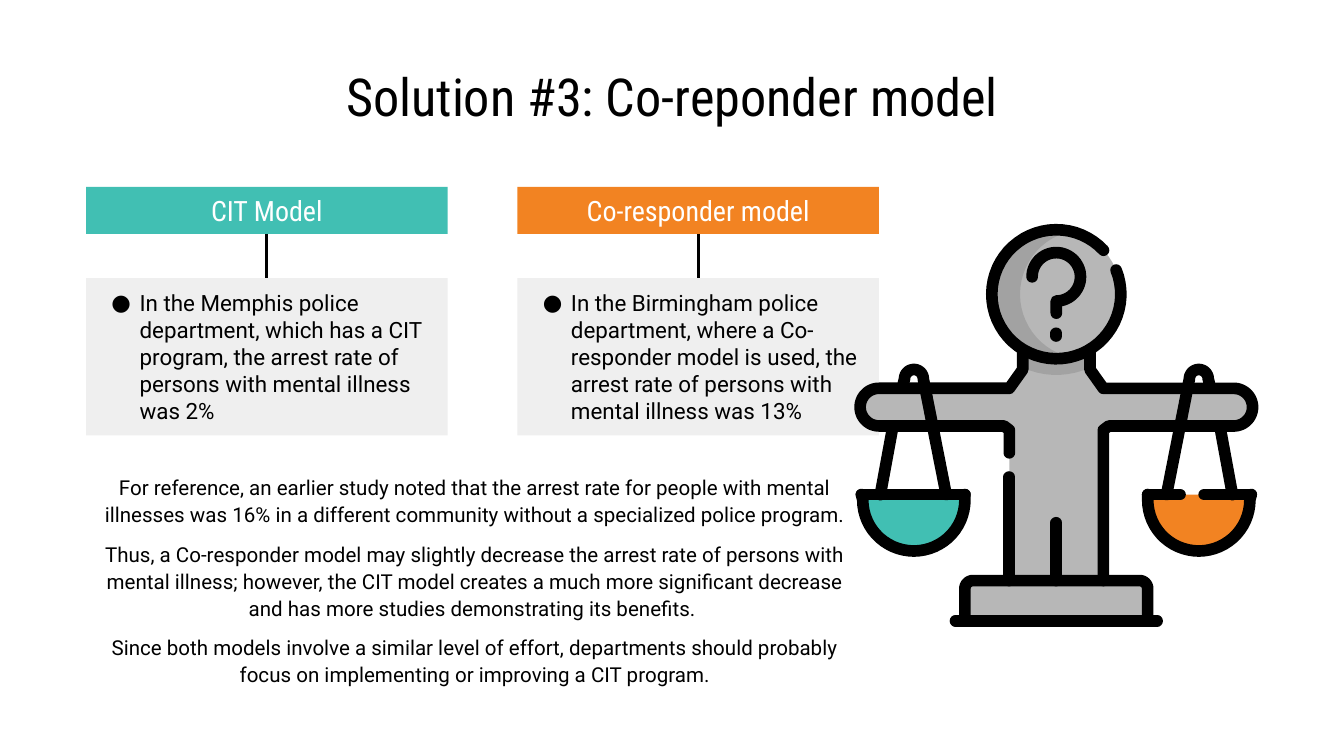
import math

from lxml import etree
from pptx import Presentation
from pptx.dml.color import RGBColor
from pptx.enum import shapes, text
from pptx.oxml.ns import qn
from pptx.util import Inches, Pt

BLACK = RGBColor(0x00, 0x00, 0x00)
WHITE = RGBColor(0xFF, 0xFF, 0xFF)
TEAL = RGBColor(0x41, 0xBF, 0xB3)
ORANGE = RGBColor(0xF2, 0x83, 0x22)
PALE = RGBColor(0xEF, 0xEF, 0xEF)
GREY = RGBColor(0xB7, 0xB7, 0xB7)
HEADING, BODY = "Roboto Condensed", "Roboto"
STROKE = 6.25


def add_run(p, words, size, font, color=BLACK):
    r = p.add_run()
    r.text = words
    r.font.size, r.font.name = Pt(size), font
    r.font.color.rgb = color


def set_frame(tf, inset=0.1):
    tf.word_wrap = True
    tf.vertical_anchor = text.MSO_ANCHOR.MIDDLE
    tf.margin_left = tf.margin_right = Inches(0.1)
    tf.margin_top = tf.margin_bottom = Inches(inset)


def add_bullet(p, size):
    pPr = p._p.get_or_add_pPr()
    pPr.set("marL", str(Inches(0.3)))
    pPr.set("indent", str(-Inches(0.21)))
    clr = etree.SubElement(pPr, qn("a:buClr"))
    etree.SubElement(clr, qn("a:srgbClr"), val=str(BLACK))
    etree.SubElement(pPr, qn("a:buSzPts"), val=str(size * 100))
    etree.SubElement(pPr, qn("a:buFont"), typeface=BODY)
    etree.SubElement(pPr, qn("a:buChar"), char="●")
    etree.SubElement(p._p, qn("a:endParaRPr"), sz=str(size * 100))


def add_title(s, box, words):
    tf = s.shapes.add_textbox(*map(Inches, box)).text_frame
    set_frame(tf)
    p = tf.paragraphs[0]
    p.alignment = text.PP_ALIGN.CENTER
    add_run(p, words, 28, HEADING)


def add_panel(shape_list, box, fill):
    sp = shape_list.add_shape(shapes.MSO_SHAPE.RECTANGLE, *map(Inches, box))
    sp.shadow.inherit = False
    sp.fill.solid()
    sp.fill.fore_color.rgb = fill
    sp.line.fill.background()
    set_frame(sp.text_frame)
    return sp


def add_model(s, box, name, finding, color):
    x, y, w, h = box
    grp = s.shapes.add_group_shape()
    # Header bar
    header = add_panel(grp.shapes, (x, y, w, 0.35), color)
    p = header.text_frame.paragraphs[0]
    p.alignment = text.PP_ALIGN.CENTER
    add_run(p, name, 15, HEADING, WHITE)
    # Finding
    card = add_panel(grp.shapes, (x, y + 0.68, w, h - 0.68), PALE)
    p = card.text_frame.paragraphs[0]
    p.alignment = text.PP_ALIGN.LEFT
    add_run(p, finding, 12, BODY)
    add_bullet(p, 12)
    # Link
    link = s.shapes.add_connector(shapes.MSO_CONNECTOR.STRAIGHT, 0, 0, 0, 0)
    link.begin_connect(header, 2)
    link.end_connect(card, 0)
    link.line.color.rgb = BLACK
    link.line.width = Pt(1.5)
    etree.SubElement(link._element.spPr, qn("a:effectLst"))


def add_conclusion(s, box, paragraphs):
    tf = s.shapes.add_textbox(*map(Inches, box)).text_frame
    set_frame(tf, 0.05)
    tf.vertical_anchor = text.MSO_ANCHOR.TOP
    for i, words in enumerate(paragraphs):
        p = tf.add_paragraph() if i else tf.paragraphs[0]
        p.alignment = text.PP_ALIGN.CENTER
        p.line_spacing = 1.1
        p.space_before = Pt(6.5 if i else 0)
        add_run(p, words, 11, BODY)


def arc(cx, cy, radius, start, end):
    """Points along an arc; degrees run clockwise from the right."""
    n = max(2, math.ceil(abs(end - start) / 6))
    angles = [math.radians(start + (end - start) * i / n) for i in range(n + 1)]
    return [(cx + radius * math.cos(a), cy + radius * math.sin(a)) for a in angles]


def mirror(points, width=3):
    return [(width - x, y) for x, y in points]


def add_scales_figure(s, box):
    left, top, w, _ = box
    k = w / 3
    grp = s.shapes.add_group_shape()

    def outline(points, closed):
        pts = [(Inches(left + x * k), Inches(top + y * k)) for x, y in points]
        fb = grp.shapes.build_freeform(*pts[0], scale=1.0)
        fb.add_line_segments(pts[1:], close=closed)
        sp = fb.convert_to_shape()
        sp.shadow.inherit = False
        return sp

    def area(points, color, alpha=None):
        sp = outline(points, True)
        sp.fill.solid()
        sp.fill.fore_color.rgb = color
        sp.line.fill.background()
        if alpha:
            clr = sp._element.spPr.find(qn("a:solidFill"))[0]
            etree.SubElement(clr, qn("a:alpha"), val=str(alpha * 1000))

    def stroke(points):
        sp = outline(points, False)
        sp.fill.background()
        sp.line.color.rgb = BLACK
        sp.line.width = Pt(STROKE * k)
        ln = sp.line._get_or_add_ln()
        ln.set("cap", "rnd")
        etree.SubElement(ln, qn("a:round"))

    # Body, neck shade, head, head shade, plinth and pans
    hand = arc(0.18, 1.37, 0.14, 270, 90)
    shoulder = [(1.25, 1.09), (1.15, 1.23), *hand, (1.11, 1.51), (1.15, 1.54)]
    side = [(1.25, 0.61), *shoulder, (1.15, 2.81)]
    area(side + mirror(side)[::-1], GREY)
    area([(1.25, 0.61), (1.75, 0.61), *arc(1.5, 0.53, 0.6, 65, 115)], BLACK, 11)
    area(arc(1.5, 0.53, 0.48, 0, 360), GREY)
    area(arc(1.5, 0.53, 0.48, 77, 283) + arc(1.71, 0.53, 0.48, 258, 102), BLACK, 11)
    corner = [(0.82, 2.95), *arc(0.88, 2.72, 0.06, 180, 270)]
    plinth = corner + mirror(corner)[::-1]
    area(plinth, GREY)
    pan = arc(0.44, 2.05, 0.39, 0, 180) + [(0.08, 2.02), (0.8, 2.02)]
    area(pan, TEAL)
    area(mirror(pan), ORANGE)

    # Question mark and head outline
    stroke(arc(1.5, 0.4, 0.18, 180, 450) + [(1.5, 0.67)])
    stroke([(1.5, 0.82), (1.5, 0.84)])
    stroke(arc(1.5, 0.53, 0.48, -22, 317))

    # Arms and legs
    arm = [(1.25, 0.95), *shoulder]
    stroke(arm + [(1.15, 1.71)])
    stroke([(1.15, 1.89), (1.15, 2.66)])
    stroke(mirror(arm + [(1.15, 2.66)]))
    stroke([(1.5, 2.23), (1.5, 2.66)])

    # Hangers and pan rims
    bowl = [(0.82, 2.02), *arc(0.44, 2.06, 0.38, 0, 180), (0.05, 2.02)]
    hanger = [(0.36, 1.2), *arc(0.44, 1.16, 0.07, 180, 360), (0.68, 2.02)]
    for place in (list, mirror):
        stroke(place(bowl))
        stroke(place(hanger))
        stroke(place([(0.28, 1.53), (0.19, 2.02)]))
    for x1, x2 in ((0.05, 0.82), (2.18, 2.42), (2.6, 2.95)):
        stroke([(x1, 2.02), (x2, 2.02)])

    # Plinth outline
    stroke(plinth)
    stroke([(0.75, 2.96), (2.25, 2.96)])


def main():
    prs = Presentation()
    prs.slide_width = Inches(10)
    prs.slide_height = prs.slide_width * 9 // 16
    s = prs.slides.add_slide(prs.slide_layouts[6])
    add_title(s, (0.34, 0.45, 9.32, 0.53), "Solution #3: Co-reponder model")
    models = [
        ("CIT Model", "In the Memphis police department, which has a CIT program, "
         "the arrest rate of persons with mental illness was 2%", TEAL),
        ("Co-responder model", "In the Birmingham police department, where a "
         "Co-responder model is used, the arrest rate of persons with mental "
         "illness was 13%", ORANGE),
    ]
    for i, model in enumerate(models):
        add_model(s, (0.64 + 3.21 * i, 1.39, 2.69, 1.85), *model)
    add_conclusion(s, (0.57, 3.47, 5.93, 1.7), [
        "For reference, an earlier study noted that the arrest rate for people with "
        "mental illnesses was 16% in a different community without a specialized "
        "police program.",
        "Thus, a Co-responder model may slightly decrease the arrest rate of persons "
        "with mental illness; however, the CIT model creates a much more significant "
        "decrease and has more studies demonstrating its benefits. ",
        "Since both models involve a similar level of effort, departments should "
        "probably focus on implementing or improving a CIT program.",
    ])
    add_scales_figure(s, (6.36, 1.66, 3, 3))
    prs.save("out.pptx")


if __name__ == "__main__":
    main()
